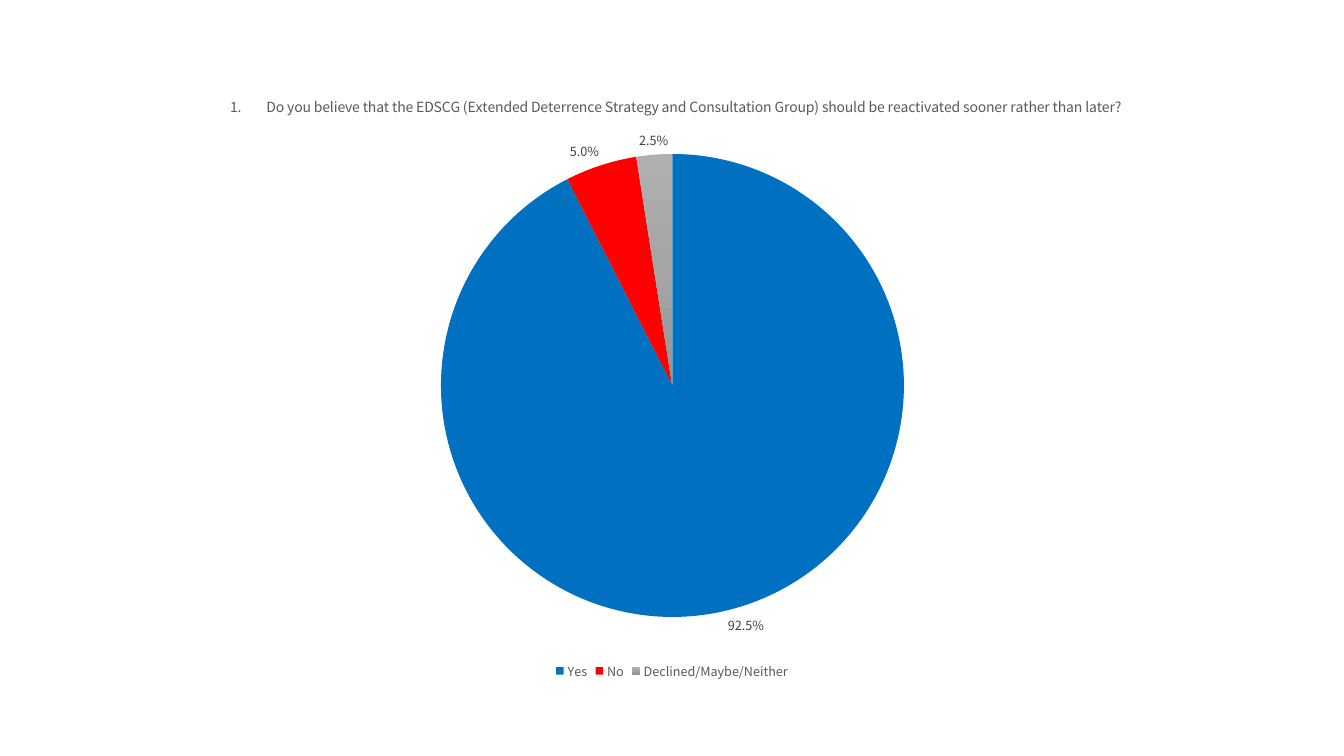
from lxml.etree import SubElement
from pptx import Presentation
from pptx.chart.data import CategoryChartData
from pptx.dml.color import RGBColor
from pptx.enum.chart import XL_CHART_TYPE, XL_LABEL_POSITION, XL_LEGEND_POSITION
from pptx.oxml import parse_xml
from pptx.oxml.ns import nsdecls, qn
from pptx.util import Emu, Pt

NUMBER = "1."
QUESTION = (
    "Do you believe that the EDSCG (Extended Deterrence Strategy and Consultation Group) "
    "should be reactivated sooner rather than later?"
)
ANSWERS = {"Yes": 0.925, "No": 0.05, "Declined/Maybe/Neither": 0.025}

FONT = "Noto Sans CJK KR"
COLORS = {"yes": "0070C0", "no": "FF0000", "text": "595959", "label": "404040"}
DECLINED_STOPS = {0: "AFAFAF", 50: "A5A5A5", 100: "939393"}

PX = 9071  # EMU in one px
SLIDE = (1344, 756)
CHART = (71, 71, 1202, 614)  # left, top, width, height
PIE = (441, 154, 463, 463)
TITLE = (227, 92)  # left, top
LEGEND = (552, 660)
NUMBER_GAP = 1570  # hundredths of a point


def style(font, size, color):
    font.name = FONT
    font.size = Pt(size)
    font.bold = False
    font.color.rgb = RGBColor.from_string(COLORS[color])


def layout_xml(place, inner=False):
    """Manual layout: slide px turned into fractions of the chart frame."""
    left, top, width, height = CHART
    fractions = [(place[0] - left) / width, (place[1] - top) / height]
    if inner:
        fractions += [place[2] / width, place[3] / height]
    target = '<c:layoutTarget val="inner"/>' if inner else ""
    modes = '<c:xMode val="edge"/><c:yMode val="edge"/>'
    values = "".join(f'<c:{name} val="{value:.4f}"/>' for name, value in zip("xywh", fractions))
    return parse_xml(
        f'<c:layout {nsdecls("c")}><c:manualLayout>{target}{modes}{values}</c:manualLayout></c:layout>'
    )


def place_part(element, place, after=None, inner=False):
    """Replace the part's layout, putting it after the named child or first."""
    for old in element.findall(qn("c:layout")):
        element.remove(old)
    index = 0 if after is None else element.index(element.find(qn(after))) + 1
    element.insert(index, layout_xml(place, inner))


def fill_gradient(slice_format, stops):
    slice_format.fill.gradient()
    slice_format.fill.gradient_angle = 270
    stop_list = next(slice_format.fill._xPr.iter(qn("a:gsLst")))
    for old in list(stop_list):
        stop_list.remove(old)
    for percent, color in stops.items():
        stop = SubElement(stop_list, qn("a:gs"), pos=str(percent * 1000))
        SubElement(stop, qn("a:srgbClr"), val=color)


def add_title(chart):
    para = chart.chart_title.text_frame.paragraphs[0]
    for text in (NUMBER, " ", QUESTION):
        span = para.add_run()
        span.text = text
        style(span.font, 10, "text")
        if text == " ":
            span.font._element.set("spc", str(NUMBER_GAP))
    chart.chart_title.include_in_layout = False
    place_part(chart.chart_title._element, TITLE, after="c:tx")


def add_legend(chart):
    chart.has_legend = True
    chart.legend.position = XL_LEGEND_POSITION.BOTTOM
    chart.legend.include_in_layout = False
    style(chart.legend.font, 9, "text")
    place_part(chart.legend._element, LEGEND, after="c:legendPos")


def format_pie(plot):
    plot.vary_by_categories = True
    points = plot.series[0].points
    for index, name in enumerate(("yes", "no")):
        fill = points[index].format.fill
        fill.solid()
        fill.fore_color.rgb = RGBColor.from_string(COLORS[name])
    fill_gradient(points[2].format, DECLINED_STOPS)
    for index in range(len(ANSWERS)):
        points[index].format.line.fill.background()

    labels = plot.series[0].data_labels
    labels.show_value = True
    labels.show_percentage = False
    labels.number_format = "0.0%"
    labels.number_format_is_linked = False
    labels.position = XL_LABEL_POSITION.OUTSIDE_END
    style(labels.font, 9, "label")


def main():
    deck = Presentation()
    deck.slide_width, deck.slide_height = (Emu(length * PX) for length in SLIDE)
    page = deck.slides.add_slide(deck.slide_layouts[6])

    data = CategoryChartData(number_format="0.0%")
    data.categories = list(ANSWERS)
    data.add_series(f"{NUMBER} {QUESTION}", list(ANSWERS.values()))
    frame = [Emu(length * PX) for length in CHART]
    chart = page.shapes.add_chart(XL_CHART_TYPE.PIE, *frame, data).chart
    chart.font.name = FONT
    chart.font.size = Pt(10)

    add_title(chart)
    add_legend(chart)
    format_pie(chart.plots[0])
    place_part(next(chart._chartSpace.iter(qn("c:plotArea"))), PIE, inner=True)
    deck.save("out.pptx")


if __name__ == "__main__":
    main()
